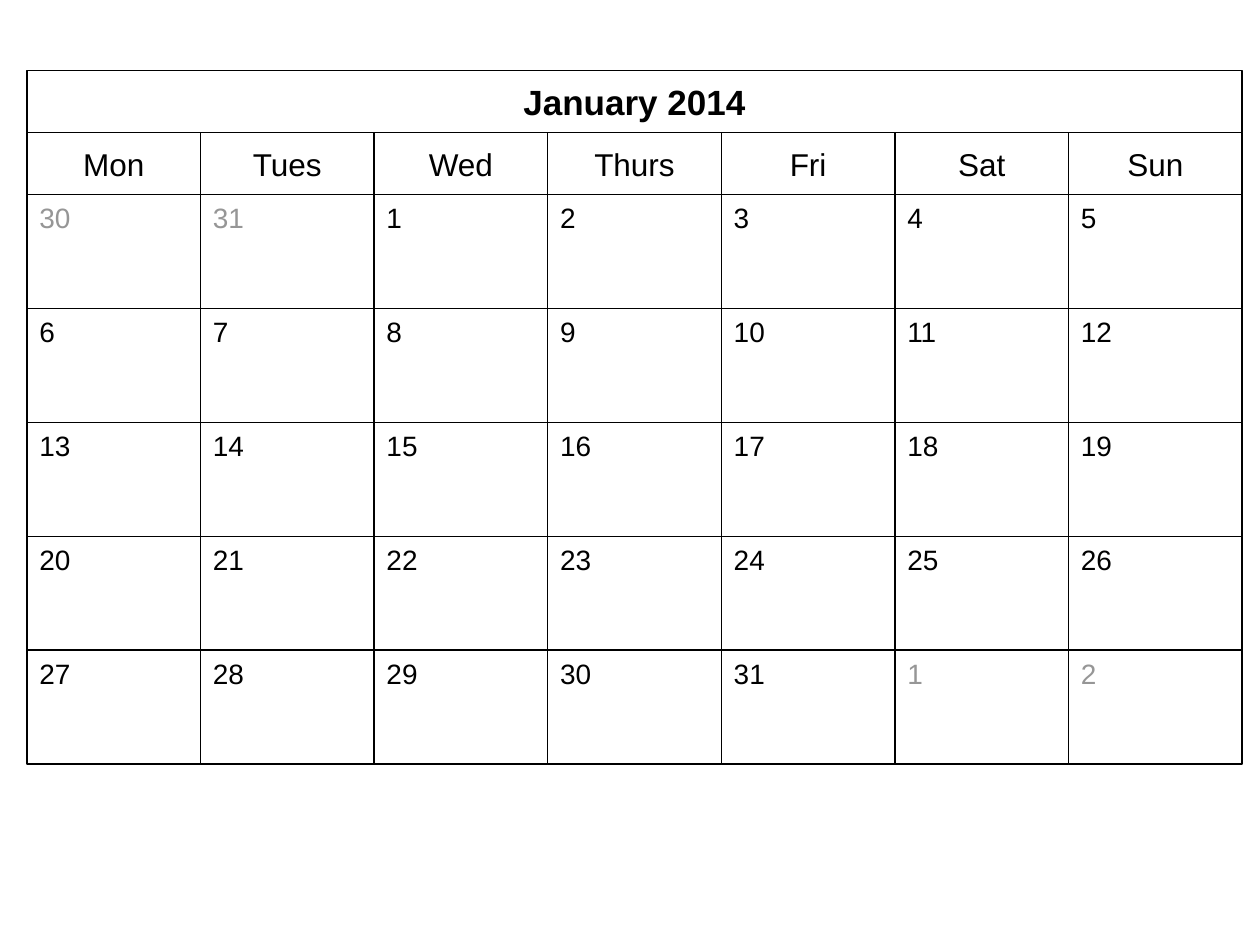
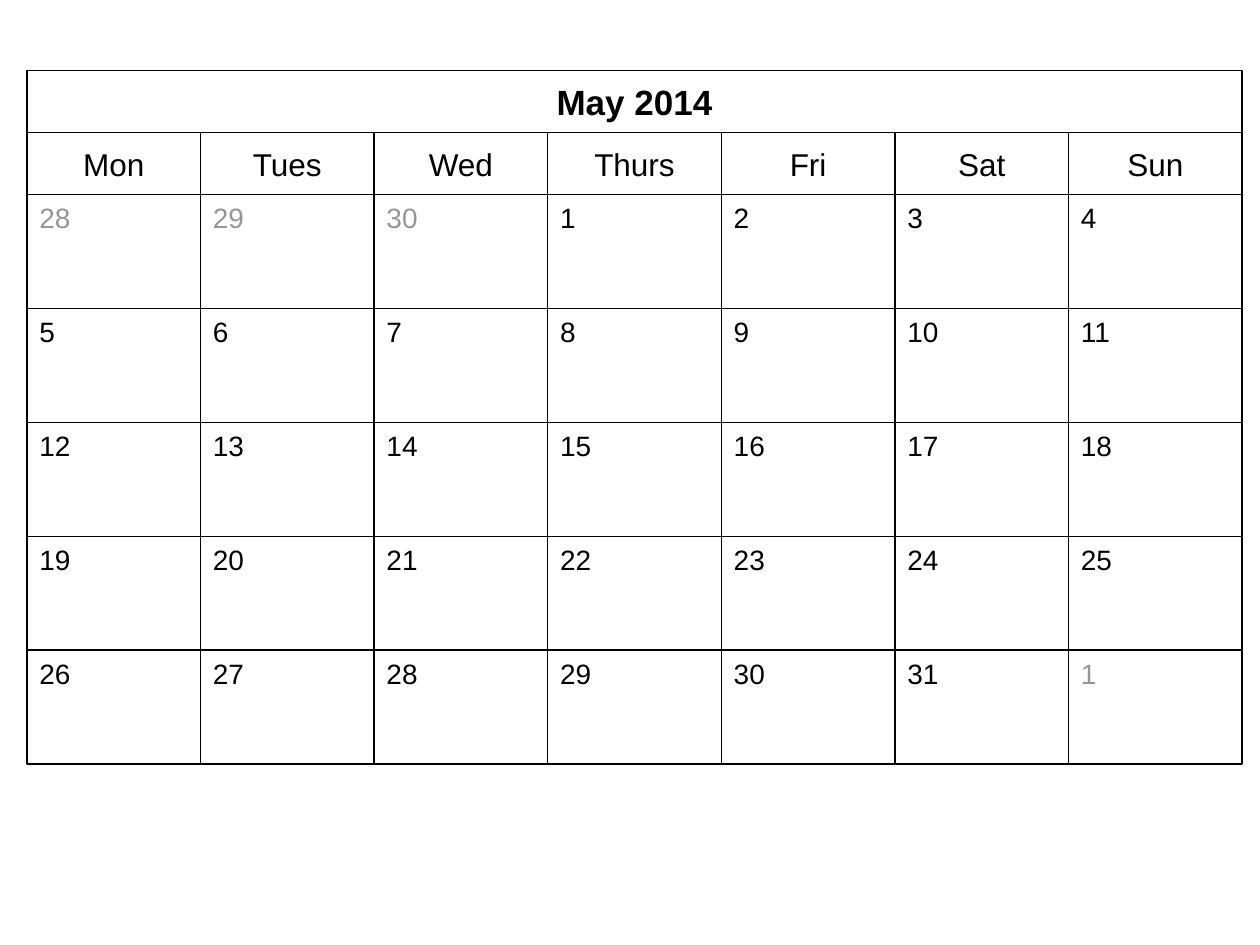
from pptx import Presentation
from pptx.dml.color import RGBColor
from pptx.enum.shapes import MSO_SHAPE
from pptx.enum.text import MSO_ANCHOR, MSO_AUTO_SIZE, PP_ALIGN
from pptx.util import Pt

RECTANGLE = MSO_SHAPE.RECTANGLE
TOP, MIDDLE = MSO_ANCHOR.TOP, MSO_ANCHOR.MIDDLE
NO_AUTOFIT = MSO_AUTO_SIZE.NONE
LEFT, CENTER = PP_ALIGN.LEFT, PP_ALIGN.CENTER

COLORS = {"paper": "FFFFFF", "ink": "000000", "other_month": "969696"}
FONT = "Arial"
TITLE_ONLY = 5
WEEKDAYS = ["Mon", "Tues", "Wed", "Thurs", "Fri", "Sat", "Sun"]
WEEKS = 5
HEADER_HEIGHT = 35.4
CALENDAR_BOX = (15.4, 40.3, 694.4, 396.3)
MONTHS = [
    {"name": "January 2014", "days_before": [30, 31], "length": 31},
    {"name": "May 2014", "days_before": [28, 29, 30], "length": 31},
]


def rgb(name):
    return RGBColor.from_string(COLORS[name])


def place(cell, left, top, width, height):
    cell.left, cell.top = Pt(left), Pt(top)
    cell.width, cell.height = Pt(width), Pt(height)


def outline(cell):
    cell.line.color.rgb = rgb("ink")
    cell.line.width = Pt(0.75)


def fill_paper(cell):
    cell.fill.solid()
    cell.fill.fore_color.rgb = rgb("paper")


def write(cell, text, size, color="ink", bold=False, align=CENTER,
          anchor=MIDDLE, inset=1.44):
    frame = cell.text_frame
    frame.auto_size = NO_AUTOFIT
    frame.word_wrap = True
    frame.vertical_anchor = anchor
    frame.margin_left = frame.margin_right = Pt(7.2)
    frame.margin_top = frame.margin_bottom = Pt(inset)
    paragraph = frame.paragraphs[0]
    paragraph.alignment = align
    run = paragraph.add_run()
    run.text = text
    run.font.name = FONT
    run.font.size = Pt(size)
    run.font.bold = bold
    run.font.color.rgb = rgb(color)


def add_cell(slide, left, top, width, height):
    cell = slide.shapes.add_shape(
        RECTANGLE, Pt(left), Pt(top), Pt(width), Pt(height))
    cell.shadow.inherit = False
    outline(cell)
    return cell


def add_month_title(slide, name, box):
    title = slide.shapes.title
    place(title, *box)
    fill_paper(title)
    outline(title)
    write(title, name, 20, bold=True)


def add_weekdays(slide, box):
    left, top, width, height = box
    column = width / len(WEEKDAYS)
    for index, weekday in enumerate(WEEKDAYS):
        cell = add_cell(slide, left + index * column, top, column, height)
        fill_paper(cell)
        write(cell, weekday, 18)


def month_days(month):
    days = [(day, "other_month") for day in month["days_before"]]
    days += [(day, "ink") for day in range(1, month["length"] + 1)]
    days_after = WEEKS * len(WEEKDAYS) - len(days)
    return days + [(day, "other_month") for day in range(1, days_after + 1)]


def add_days(slide, month, box):
    left, top, width, height = box
    column, row = width / len(WEEKDAYS), height / WEEKS
    for index, (day, color) in enumerate(month_days(month)):
        week, weekday = divmod(index, len(WEEKDAYS))
        cell = add_cell(slide, left + weekday * column, top + week * row,
                        column, row)
        cell.fill.background()
        write(cell, str(day), 16, color, align=LEFT, anchor=TOP, inset=3.6)


def add_calendar(prs, month, box):
    slide = prs.slides.add_slide(prs.slide_layouts[TITLE_ONLY])
    left, top, width, height = box
    add_month_title(slide, month["name"], (left, top, width, HEADER_HEIGHT))
    add_weekdays(slide, (left, top + HEADER_HEIGHT, width, HEADER_HEIGHT))
    add_days(slide, month, (left, top + 2 * HEADER_HEIGHT, width,
                            height - 2 * HEADER_HEIGHT))


def main():
    prs = Presentation()
    prs.slide_width, prs.slide_height = Pt(720), Pt(540)
    for month in MONTHS:
        add_calendar(prs, month, CALENDAR_BOX)
    prs.save("out.pptx")


if __name__ == "__main__":
    main()
